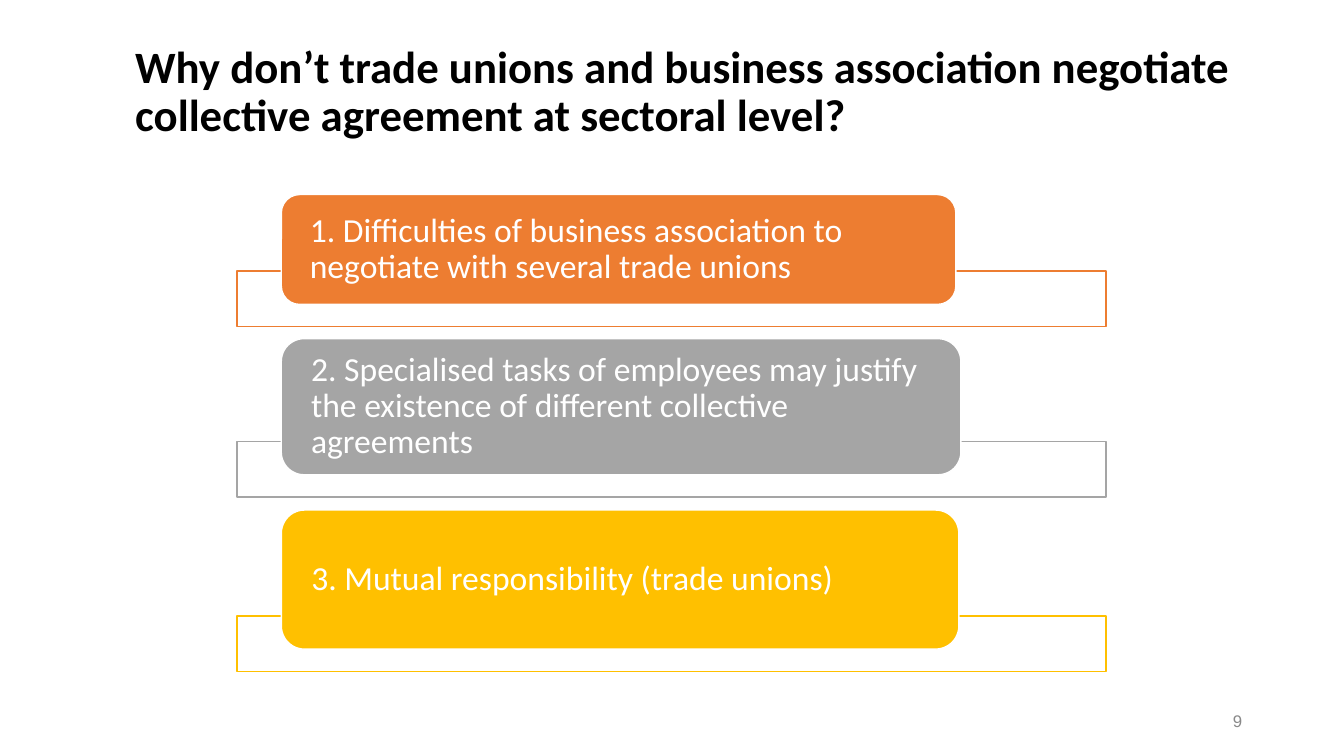
from pptx import Presentation
from pptx.dml.color import RGBColor
from pptx.enum.shapes import MSO_SHAPE
from pptx.enum.text import MSO_ANCHOR, MSO_AUTO_SIZE, PP_ALIGN
from pptx.oxml.ns import qn
from pptx.util import Inches, Pt
from lxml import etree

RECT, ROUND = MSO_SHAPE.RECTANGLE, MSO_SHAPE.ROUNDED_RECTANGLE
MIDDLE = MSO_ANCHOR.MIDDLE
LEFT, RIGHT = PP_ALIGN.LEFT, PP_ALIGN.RIGHT
BLACK = RGBColor(0x00, 0x00, 0x00)
WHITE = RGBColor(0xFF, 0xFF, 0xFF)
ORANGE = RGBColor(0xED, 0x7D, 0x31)
GRAY = RGBColor(0xA5, 0xA5, 0xA5)
GOLD = RGBColor(0xFF, 0xC0, 0x00)
PALE = RGBColor(0x89, 0x89, 0x89)


def add_box(kind, left, top, width, height, fill, line):
    box = slide.shapes.add_shape(
        kind, Inches(left), Inches(top), Inches(width), Inches(height))
    box.shadow.inherit = False
    box.fill.solid()
    box.fill.fore_color.rgb = fill
    box.line.color.rgb = line
    box.line.width = Pt(1)
    return box


def set_text(shape, text, size, color, align=LEFT, font="Calibri", bold=False):
    frame = shape.text_frame
    frame.text = text
    frame.word_wrap = True
    frame.auto_size = MSO_AUTO_SIZE.NONE
    frame.vertical_anchor = MIDDLE
    para = frame.paragraphs[0]
    para.alignment = align
    run = para.runs[0].font
    run.name, run.size, run.bold = font, Pt(size), bold
    run.color.rgb = color
    return para


prs = Presentation()
prs.slide_width, prs.slide_height = Inches(13.33), Inches(7.5)
slide = prs.slides.add_slide(prs.slide_layouts[5])

title = slide.shapes.title
title.left, title.top = Inches(1.24), Inches(0.2)
title.width, title.height = Inches(11.5), Inches(1.45)
para = set_text(
    title, "Why don’t trade unions and business association negotiate "
    "collective agreement at sectoral level?", 32, BLACK, bold=True)
para.line_spacing = 0.9

# Each reason: text, colour, top, width and height of its label
reasons = [
    ("1. Difficulties of business association to negotiate with "
     "several trade unions", ORANGE, 1.93, 6.69, 1.09),
    ("2. Specialised tasks of employees may justify the existence of "
     "different collective agreements", GRAY, 3.36, 6.74, 1.35),
    ("3. Mutual responsibility (trade unions)", GOLD, 5.06, 6.72, 1.38),
]
for text, color, top, width, height in reasons:
    bar = add_box(RECT, 2.35, top + height - 0.33, 8.62, 0.55, WHITE, color)
    tint = bar.fill._xPr.find(qn("a:solidFill"))[0]
    etree.SubElement(tint, qn("a:alpha"), val="90000")

    label = add_box(ROUND, 2.79, top, width, height, color, WHITE)
    para = set_text(label, text, 24, WHITE)
    para.line_spacing = 0.9
    frame = label.text_frame
    frame.margin_left = frame.margin_right = Inches(0.23)
    frame.margin_top = frame.margin_bottom = 0

number = slide.shapes.add_textbox(
    Inches(9.42), Inches(6.95), Inches(3), Inches(0.4))
set_text(number, "9", 12, PALE, RIGHT, "Arial")

prs.save("out.pptx")
